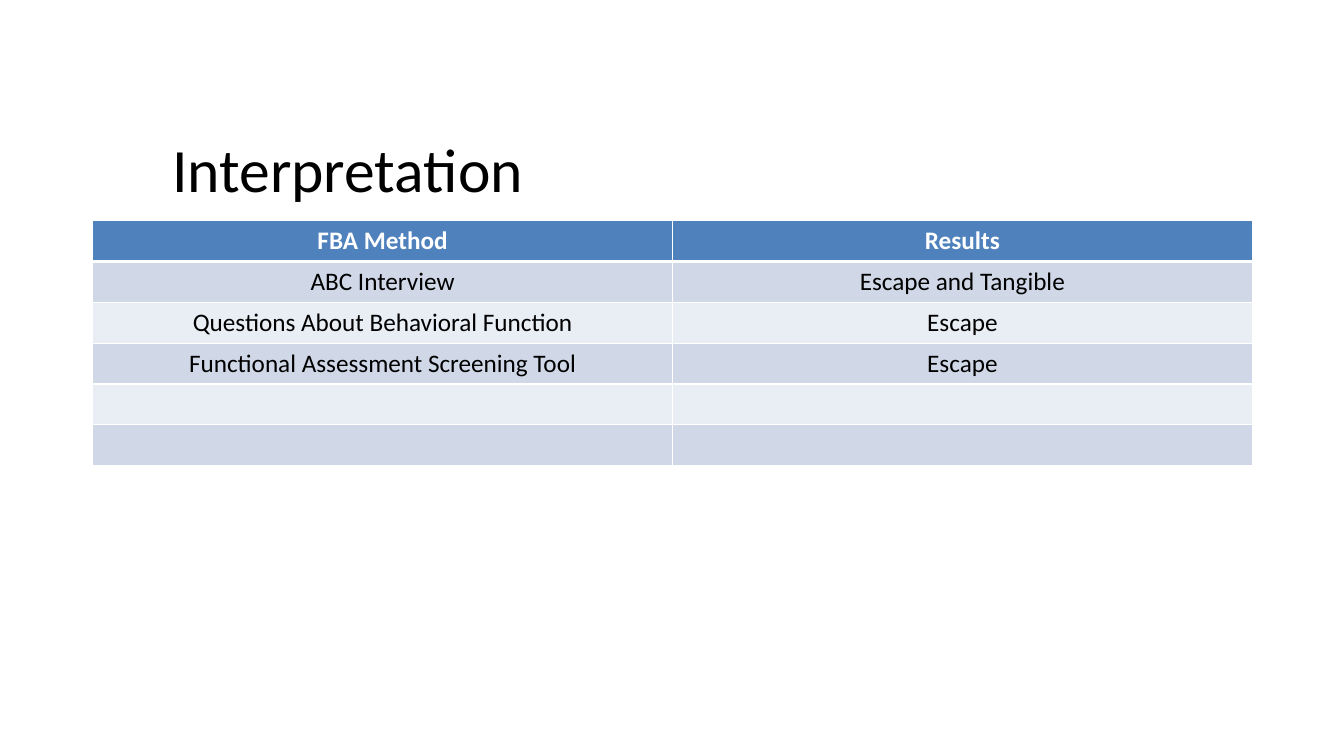
from dataclasses import dataclass

from lxml import etree
from pptx import Presentation
from pptx import util as u
from pptx.dml.color import RGBColor
from pptx.enum import text
from pptx.oxml.ns import qn

PX = 4572  # EMU per px, 200 px to the inch


@dataclass(frozen=True)
class Theme:
    font: str = "Calibri"
    title_size: int = 44
    cell_size: int = 18
    ink: str = "000000"
    white: str = "FFFFFF"
    header: str = "4F81BD"
    bands: tuple[str, str] = ("D0D8E8", "E9EDF4")
    rule: int = 1
    header_rule: int = 3


@dataclass(frozen=True)
class Box:
    left: int
    top: int
    width: int
    height: int

    def emu(self) -> list[int]:
        return [v * PX for v in (self.left, self.top, self.width, self.height)]


@dataclass(frozen=True)
class Finding:
    method: str = ""
    result: str = ""


THEME = Theme()
TITLE_BOX = Box(-460, 244, 2300, 290)
TABLE_BOX = Box(184, 438, 2300, 486)
HEADER = Finding("FBA Method", "Results")
FINDINGS = [
    Finding("ABC Interview", "Escape and Tangible"),
    Finding("Questions About Behavioral Function", "Escape"),
    Finding("Functional Assessment Screening Tool", "Escape"),
    Finding(),
    Finding(),
]


def write(tf, words: str, size: int, color: str, bold: bool = False) -> None:
    p = tf.paragraphs[0]
    p.alignment = text.PP_ALIGN.CENTER
    # An empty cell keeps its text size on the paragraph
    target = p
    if words:
        target = p.add_run()
        target.text = words
    font = target.font
    for name, value in {"name": THEME.font, "size": u.Pt(size), "bold": bold}.items():
        setattr(font, name, value)
    font.color.rgb = RGBColor.from_string(color)


def add_border(cell, side: str, width: int) -> None:
    line = etree.SubElement(cell._tc.get_or_add_tcPr(), qn(f"a:ln{side}"), w=str(u.Pt(width)))
    fill = etree.SubElement(line, qn("a:solidFill"))
    etree.SubElement(fill, qn("a:srgbClr"), val=THEME.white)


def add_title(s, words: str, box: Box) -> None:
    tf = s.shapes.add_textbox(*box.emu()).text_frame
    layout = {
        "word_wrap": True,
        "vertical_anchor": text.MSO_ANCHOR.TOP,
        "margin_top": 16 * PX,
    }
    for name, value in layout.items():
        setattr(tf, name, value)
    write(tf, words, THEME.title_size, THEME.ink)


def add_findings(s, rows: list[Finding], box: Box) -> None:
    table = s.shapes.add_table(len(rows), 2, *box.emu()).table
    for i, finding in enumerate(rows):
        table.rows[i].height = box.height * PX // len(rows)
        is_header = i == 0
        fill = THEME.header if is_header else THEME.bands[(i - 1) % 2]
        ink = THEME.white if is_header else THEME.ink
        borders = {
            "L": THEME.rule,
            "R": THEME.rule,
            "T": THEME.header_rule if i == 1 else THEME.rule,
            "B": THEME.header_rule if is_header else THEME.rule,
        }
        for j, words in enumerate((finding.method, finding.result)):
            cell = table.cell(i, j)
            for side, width in borders.items():
                add_border(cell, side, width)
            cell.fill.solid()
            cell.fill.fore_color.rgb = RGBColor.from_string(fill)
            write(cell.text_frame, words, THEME.cell_size, ink, is_header)


def main() -> None:
    prs = Presentation()
    prs.slide_width, prs.slide_height = u.Inches(13.33), u.Inches(7.5)
    s = prs.slides.add_slide(prs.slide_layouts[6])

    # Heading, then the assessment table over its lower part
    add_title(s, "Interpretation", TITLE_BOX)
    add_findings(s, [HEADER, *FINDINGS], TABLE_BOX)
    prs.save("out.pptx")


if __name__ == "__main__":
    main()
